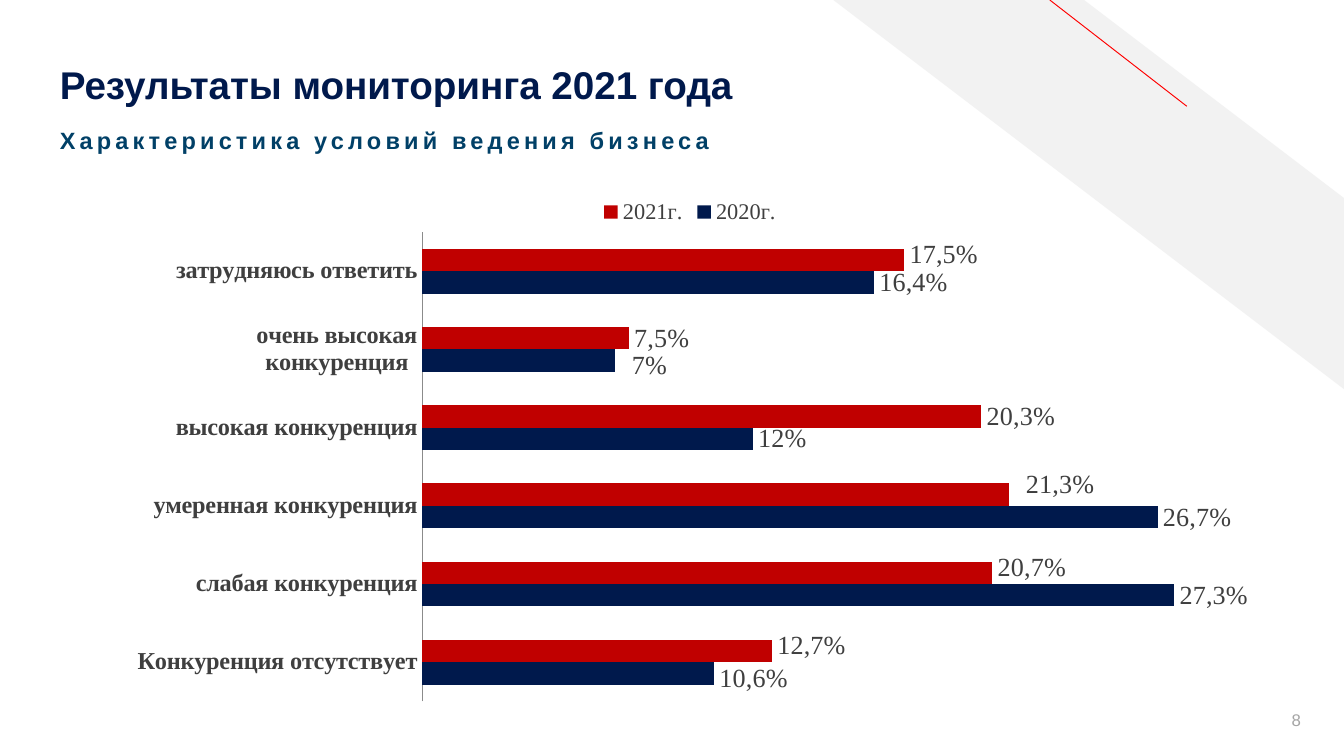
import dataclasses

import lxml.etree
import pptx
import pptx.chart.data
import pptx.dml.color
import pptx.enum.chart
import pptx.enum.shapes
import pptx.enum.text
import pptx.oxml
import pptx.oxml.ns
import pptx.util

Cm = pptx.util.Cm
Pt = pptx.util.Pt
qn = pptx.oxml.ns.qn


@dataclasses.dataclass(frozen=True)
class Theme:
    navy: str = "00194C"
    teal: str = "014067"
    crimson: str = "C00000"
    red: str = "FF0000"
    stripe: str = "F2F2F2"
    ink: str = "3F3F3F"
    axis: str = "8B8B8B"
    muted: str = "A5A5A5"
    sans: str = "Arial"
    serif: str = "Times New Roman"
    title_size: float = 20.7
    subtitle_size: float = 12.6
    number_size: float = 9
    legend_size: float = 12
    category_size: float = 13
    label_size: float = 14


THEME = Theme()

CATEGORIES = (
    "Конкуренция отсутствует",
    "слабая конкуренция",
    "умеренная конкуренция",
    "высокая конкуренция",
    "очень высокая конкуренция",
    "затрудняюсь ответить",
)
SERIES = (
    ("2020г.", THEME.navy, (10.6, 27.3, 26.7, 12, 7, 16.4)),
    ("2021г.", THEME.crimson, (12.7, 20.7, 21.3, 20.3, 7.5, 17.5)),
)
LABEL_SHIFTS = {
    ("2020г.", 0): (0, 0.01),
    ("2020г.", 4): (0.01, 0.01),
    ("2021г.", 0): (0, -0.01),
    ("2021г.", 1): (0, -0.01),
    ("2021г.", 2): (0.01, -0.02),
    ("2021г.", 5): (0, -0.01),
}


def rgb(color):
    return pptx.dml.color.RGBColor.from_string(color)


def style_font(font, name, size, color, bold=False):
    font.name = name
    font.size = Pt(size)
    font.color.rgb = rgb(color)
    font.bold = bold


def add_span(para, text, *style, spacing=None):
    span = para.add_run()
    span.text = text
    style_font(span.font, *style)
    if spacing:
        span.font._element.set("spc", str(round(spacing * 100)))


def set_frame(frame, anchor, bottom):
    frame.word_wrap = True
    frame.auto_size = pptx.enum.text.MSO_AUTO_SIZE.NONE
    frame.vertical_anchor = anchor
    frame.margin_left = frame.margin_right = Cm(0.18)
    frame.margin_top = Cm(0.1)
    frame.margin_bottom = Cm(bottom)


def add_decoration(page):
    stripe = page.shapes.add_shape(
        pptx.enum.shapes.MSO_SHAPE.DIAGONAL_STRIPE,
        Cm(15.75), Cm(0), Cm(9.67), Cm(7.37))
    stripe.adjustments[0] = 0.51
    stripe._element.spPr.find(qn("a:xfrm")).set("flipH", "1")
    stripe.shadow.inherit = False
    stripe.fill.solid()
    stripe.fill.fore_color.rgb = rgb(THEME.stripe)
    stripe.line.fill.background()

    line = page.shapes.add_connector(
        pptx.enum.shapes.MSO_CONNECTOR.STRAIGHT,
        Cm(22.43), Cm(2.01), Cm(19.84), Cm(0))
    line.line.color.rgb = rgb(THEME.red)
    line.line.width = Pt(0.5)
    lxml.etree.SubElement(line._element.spPr, qn("a:effectLst"))


def fill_title(page, title, subtitle):
    box = page.shapes.title
    box.left, box.top, box.width, box.height = Cm(0.95), Cm(1.23), Cm(17.22), Cm(1.68)
    frame = box.text_frame
    set_frame(frame, pptx.enum.text.MSO_ANCHOR.BOTTOM, 0)
    heading, caption = frame.paragraphs[0], frame.add_paragraph()
    for para in (heading, caption):
        para.alignment = pptx.enum.text.PP_ALIGN.LEFT
        para.line_spacing = 0.7
        para.space_before = Pt(0)
    caption.space_before = Pt(15)
    add_span(heading, title, THEME.sans, THEME.title_size, THEME.navy, True)
    add_span(caption, subtitle, THEME.sans, THEME.subtitle_size, THEME.teal, True,
             spacing=2.25)


def add_page_number(page, number):
    box = page.shapes.add_textbox(Cm(23.22), Cm(13.23), Cm(1.55), Cm(0.76))
    set_frame(box.text_frame, pptx.enum.text.MSO_ANCHOR.MIDDLE, 0.1)
    para = box.text_frame.paragraphs[0]
    para.alignment = pptx.enum.text.PP_ALIGN.RIGHT
    add_span(para, number, THEME.sans, THEME.number_size, THEME.muted)


def make_layout(**values):
    layout = pptx.oxml.parse_xml(
        '<c:layout xmlns:c="http://schemas.openxmlformats.org/drawingml/2006/chart">'
        "<c:manualLayout/></c:layout>")
    for name, value in values.items():
        lxml.etree.SubElement(layout[0], qn("c:" + name)).set("val", str(value))
    return layout


def place_part(part, index, **values):
    for old in part.findall(qn("c:layout")):
        part.remove(old)
    part.insert(index, make_layout(**values))


def label_points(series, values):
    labels = series.data_labels
    labels.show_value = True
    labels.position = pptx.enum.chart.XL_LABEL_POSITION.OUTSIDE_END
    style_font(labels.font, THEME.serif, THEME.label_size, THEME.ink, True)
    for leader in labels._element.findall(qn("c:showLeaderLines")):
        leader.set("val", "0")
    for index, value in enumerate(values):
        label = series.points[index].data_label
        para = label.text_frame.paragraphs[0]
        add_span(para, f"{value:g}%".replace(".", ","),
                 THEME.serif, THEME.label_size, THEME.ink)
        label.position = pptx.enum.chart.XL_LABEL_POSITION.OUTSIDE_END
        shift = LABEL_SHIFTS.get((series.name, index))
        if shift:
            element = labels._element.findall(qn("c:dLbl"))[index]
            place_part(element, 1, x=shift[0], y=shift[1])


def add_bar_chart(page):
    data = pptx.chart.data.CategoryChartData(number_format="0.0")
    data.categories = CATEGORIES
    for name, _, values in SERIES:
        data.add_series(name, values)
    chart = page.shapes.add_chart(
        pptx.enum.chart.XL_CHART_TYPE.BAR_CLUSTERED,
        Cm(2.26), Cm(3.38), Cm(22), Cm(10.08), data).chart
    chart.has_title = False
    style_font(chart.font, THEME.sans, 10, THEME.ink)
    chart.has_legend = True
    chart.legend.position = pptx.enum.chart.XL_LEGEND_POSITION.TOP
    chart.legend.include_in_layout = False
    style_font(chart.legend.font, THEME.serif, THEME.legend_size, THEME.ink)
    place_part(chart.legend._element, 1, xMode="edge", yMode="edge", x=0.41, y=0.03)

    category = chart.category_axis
    category.major_tick_mark = pptx.enum.chart.XL_TICK_MARK.NONE
    category.format.line.color.rgb = rgb(THEME.axis)
    category.format.line.width = Pt(0.5)
    style_font(category.tick_labels.font, THEME.serif, THEME.category_size,
               THEME.ink, True)
    value_axis = chart.value_axis
    value_axis.minimum_scale, value_axis.maximum_scale = 0, 30
    value_axis.has_major_gridlines = False
    value_axis.visible = False

    plot = chart.plots[0]
    plot.vary_by_categories = False
    plot.gap_width, plot.overlap = 150, 0
    for series, (_, color, values) in zip(plot.series, SERIES):
        series.format.fill.solid()
        series.format.fill.fore_color.rgb = rgb(color)
        label_points(series, values)
    place_part(chart._chartSpace.chart.plotArea, 0, layoutTarget="inner",
               xMode="edge", yMode="edge", x=0.26, y=0.1, w=0.71, h=0.88)


def main():
    deck = pptx.Presentation()
    deck.slide_width, deck.slide_height = Cm(25.4), Cm(14.29)
    page = deck.slides.add_slide(deck.slide_layouts.get_by_name("Title Only"))
    add_decoration(page)
    fill_title(page, "Результаты мониторинга 2021 года",
               "Характеристика условий ведения бизнеса")
    add_page_number(page, "8")
    add_bar_chart(page)
    deck.save("out.pptx")


if __name__ == "__main__":
    main()
